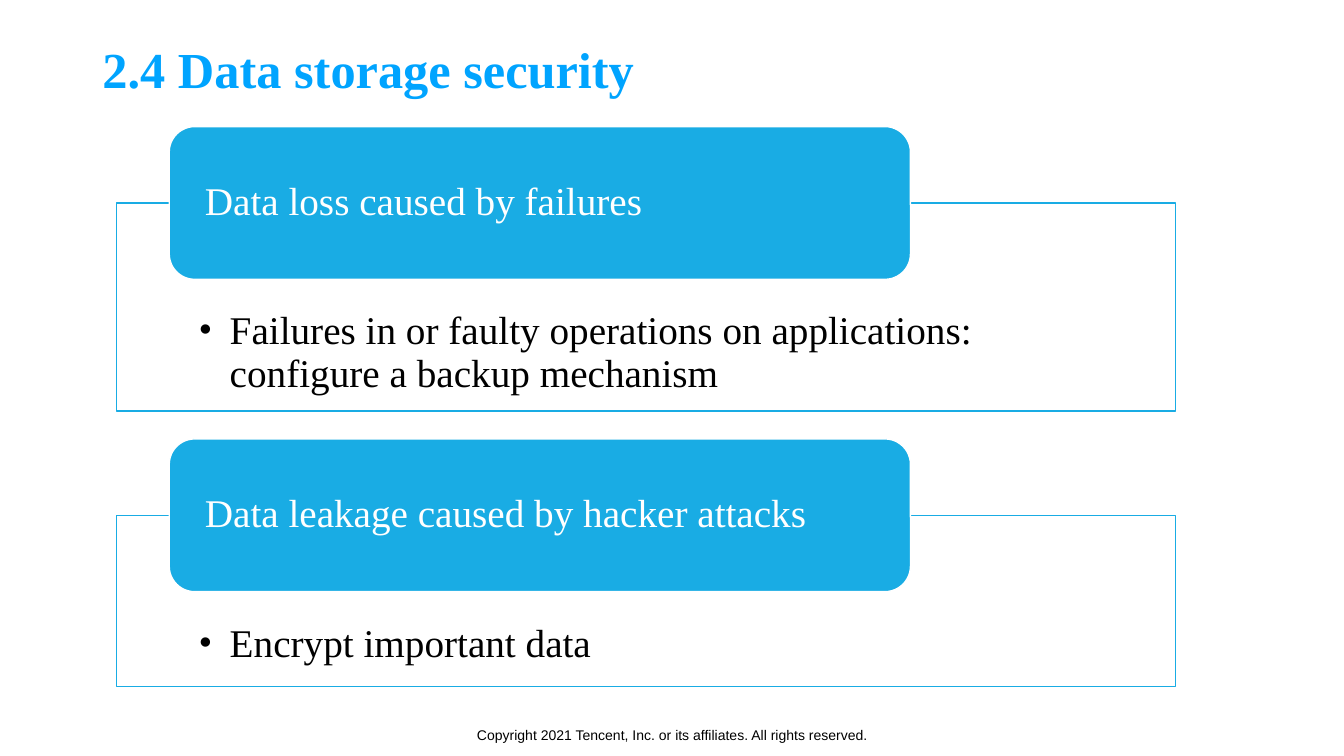
from dataclasses import dataclass

from lxml.etree import SubElement
from pptx import Presentation
from pptx.dml.color import RGBColor
from pptx.enum.shapes import MSO_SHAPE
from pptx.enum.text import MSO_ANCHOR, MSO_AUTO_SIZE, PP_ALIGN
from pptx.oxml.ns import qn
from pptx.shapes.autoshape import Shape
from pptx.slide import Slide
from pptx.text.text import TextFrame
from pptx.util import Cm, Pt

WHITE = RGBColor(0xFF, 0xFF, 0xFF)
BLACK = RGBColor(0x00, 0x00, 0x00)
TITLE_BLUE = RGBColor(0x00, 0xA4, 0xFF)
PANEL_BLUE = RGBColor(0x19, 0xAC, 0xE4)

SERIF = "Times New Roman"
PANEL_LEFT, PANEL_WIDTH = 5.87, 53.37
HEADING_LEFT, HEADING_WIDTH, HEADING_HEIGHT = 8.53, 37.36, 7.7
FIRST_TOP, RISK_GAP = 6.38, 1.4
BULLET_INDENT = 1.57


@dataclass(frozen=True)
class Risk:
    heading: str
    measure: str
    panel_height: float


RISKS = [
    Risk("Data loss caused by failures",
         "Failures in or faulty operations on applications: configure a backup mechanism",
         10.49),
    Risk("Data leakage caused by hacker attacks", "Encrypt important data", 8.64),
]


def write(frame: TextFrame, text: str, *, size: float, color: RGBColor,
          font: str = SERIF, bold: bool = False, align: PP_ALIGN = PP_ALIGN.LEFT,
          anchor: MSO_ANCHOR = MSO_ANCHOR.MIDDLE, spacing: float = 0.9,
          insets: tuple[float, float, float, float] = (0.51, 0.25, 0.51, 0.25),
          bullet: bool = False) -> None:
    """Fill a frame with one paragraph; insets are left, top, right, bottom in cm."""
    frame.word_wrap = True
    frame.auto_size = MSO_AUTO_SIZE.NONE
    frame.vertical_anchor = anchor
    (frame.margin_left, frame.margin_top,
     frame.margin_right, frame.margin_bottom) = (Cm(inset) for inset in insets)
    frame.text = text
    paragraph = frame.paragraphs[0]
    if bullet:
        add_bullet(paragraph, color)
    paragraph.alignment = align
    paragraph.line_spacing = spacing
    paragraph.space_before = Pt(0)
    run_font = paragraph.runs[0].font
    run_font.name, run_font.size, run_font.bold = font, Pt(size), bold
    run_font.color.rgb = color


def add_bullet(paragraph, color: RGBColor) -> None:
    paragraph.level = 1
    properties = paragraph._p.get_or_add_pPr()
    properties.set("marL", str(Cm(BULLET_INDENT)))
    properties.set("indent", str(-Cm(BULLET_INDENT)))
    bullet_color = SubElement(properties, qn("a:buClr"))
    SubElement(bullet_color, qn("a:srgbClr"), val=str(color))
    SubElement(properties, qn("a:buFont"), typeface=SERIF)
    SubElement(properties, qn("a:buChar"), char="•")


def add_box(slide: Slide, kind: MSO_SHAPE, left: float, top: float, width: float,
            height: float, fill: RGBColor, line: RGBColor) -> Shape:
    box = slide.shapes.add_shape(kind, Cm(left), Cm(top), Cm(width), Cm(height))
    box.shadow.inherit = False
    box.fill.solid()
    box.fill.fore_color.rgb = fill
    box.line.color.rgb = line
    box.line.width = Pt(2)
    return box


def add_risk(slide: Slide, risk: Risk, top: float) -> float:
    """Draw a heading straddling its panel's top edge; return the panel's bottom."""
    panel_top = top + HEADING_HEIGHT / 2
    panel = add_box(slide, MSO_SHAPE.RECTANGLE, PANEL_LEFT, panel_top,
                    PANEL_WIDTH, risk.panel_height, WHITE, PANEL_BLUE)
    fill_color = panel._element.spPr.find(qn("a:solidFill")).find(qn("a:srgbClr"))
    SubElement(fill_color, qn("a:alpha"), val="89000")
    write(panel.text_frame, risk.measure, size=56, color=BLACK, bullet=True,
          anchor=MSO_ANCHOR.TOP, insets=(4.14, 5.44, 4.14, 1.12))

    heading = add_box(slide, MSO_SHAPE.ROUNDED_RECTANGLE, HEADING_LEFT, top,
                      HEADING_WIDTH, HEADING_HEIGHT, PANEL_BLUE, WHITE)
    write(heading.text_frame, risk.heading, size=56, color=WHITE,
          insets=(1.42, 0, 1.42, 0))
    return panel_top + risk.panel_height


def main() -> None:
    presentation = Presentation()
    presentation.slide_width, presentation.slide_height = Cm(67.74), Cm(38.1)
    slide = presentation.slides.add_slide(presentation.slide_layouts[5])

    title = slide.shapes.title
    title.left, title.top, title.width, title.height = Cm(4.65), Cm(2.29), Cm(54.56), Cm(2.67)
    write(title.text_frame, "2.4 Data storage security", size=72, color=TITLE_BLUE, bold=True)

    top = FIRST_TOP
    for risk in RISKS:
        top = add_risk(slide, risk, top) + RISK_GAP

    copyright_line = slide.shapes.add_textbox(Cm(20.68), Cm(36.02), Cm(26.42), Cm(2.03))
    write(copyright_line.text_frame,
          "Copyright 2021 Tencent, Inc. or its affiliates. All rights reserved.",
          size=20, color=BLACK, font="Arial", align=PP_ALIGN.CENTER, spacing=1.0)

    presentation.save("out.pptx")


if __name__ == "__main__":
    main()
